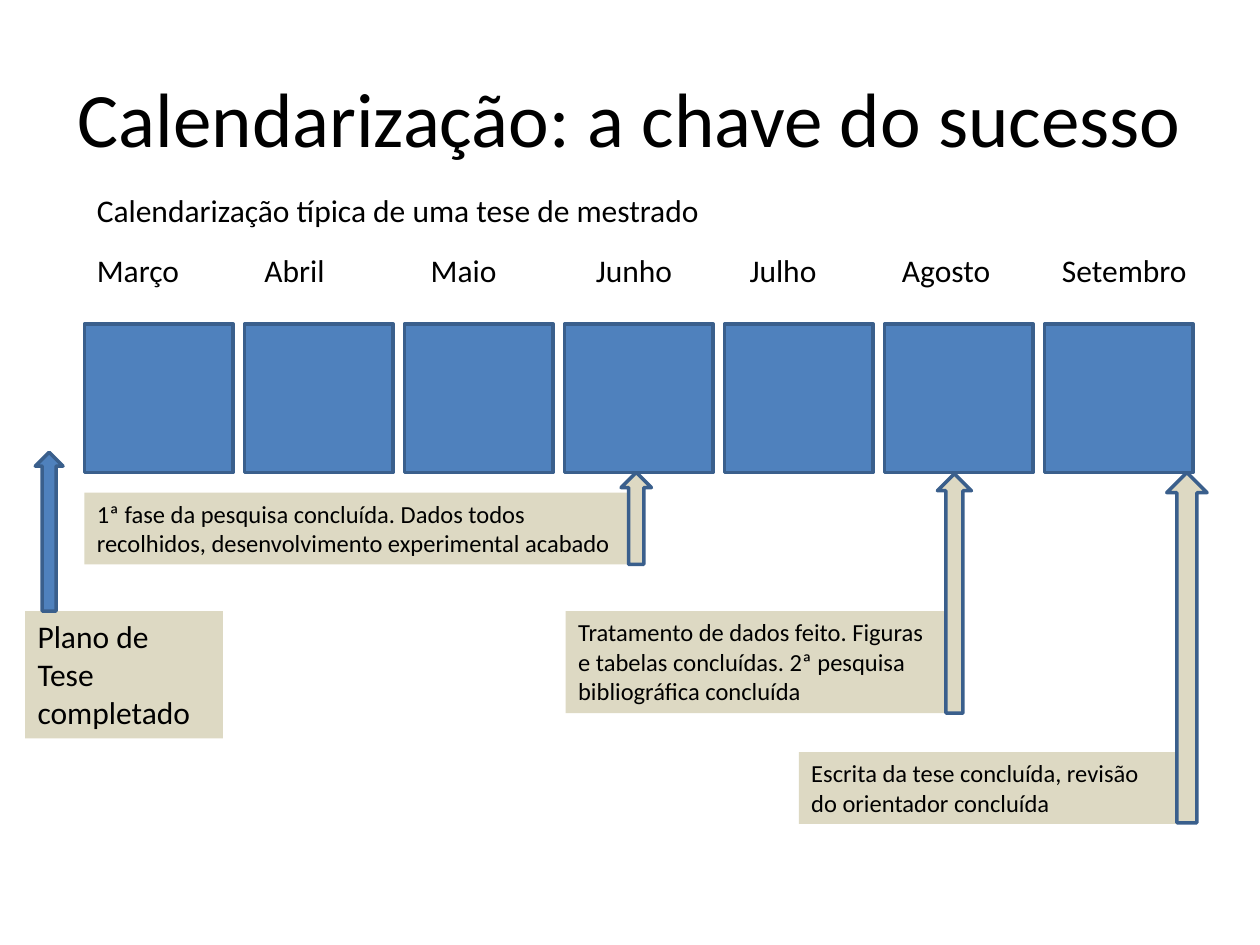
from lxml import etree
from pptx import Presentation
from pptx import util as u
from pptx.dml.color import RGBColor
from pptx.enum import shapes, text
from pptx.oxml.ns import qn

COLORS = {"text": "000000", "month": "4F81BD", "outline": "3A5F8C", "note": "DDD9C3"}

MONTHS = ["Março", "Abril", "Maio", "Junho", "Julho", "Agosto", "Setembro"]
MONTH_TABS = [1.33, 2.65, 3.96, 5.18, 6.39, 7.66]
LEFT, TOP, SIDE, PITCH = 0.67, 2.57, 1.18, 1.27

# left, top, width, height, font size, paragraphs
NOTES = [
    (0.2, 4.85, 1.57, 1.01, 18, ["Plano de Tese", "completado"]),
    (LEFT, 3.91, 4.33, 0.57, 14,
     ["1ª fase da pesquisa concluída. Dados todos recolhidos, "
      "desenvolvimento experimental acabado"]),
    (4.49, 4.85, 3.03, 0.81, 14,
     ["Tratamento de dados feito. Figuras e tabelas concluídas. "
      "2ª pesquisa bibliográfica concluída"]),
    (6.34, 5.97, 3.03, 0.57, 14,
     ["Escrita da tese concluída, revisão do orientador concluída"]),
]

# left, top, width, height, fill
ARROWS = [
    (0.28, 3.59, 0.22, 1.26, "month"),
    (4.93, 3.75, 0.24, 0.73, "note"),
    (7.44, 3.76, 0.27, 1.9, "note"),
    (9.26, 3.75, 0.32, 2.78, "note"),
]


def rgb(name):
    return RGBColor.from_string(COLORS[name])


def write(tf, paragraphs, size, align=text.PP_ALIGN.LEFT, anchor=text.MSO_ANCHOR.TOP):
    tf.word_wrap = True
    tf.vertical_anchor = anchor
    for i, line in enumerate(paragraphs):
        p = tf.paragraphs[0] if i == 0 else tf.add_paragraph()
        p.alignment = align
        r = p.add_run()
        r.text = line
        for name, value in {"size": u.Pt(size), "name": "Calibri"}.items():
            setattr(r.font, name, value)
        r.font.color.rgb = rgb("text")


def add_title(s, line):
    sp = s.shapes.title
    box = {"left": 0.5, "top": 0.3, "width": 9, "height": 1.25}
    for name, value in box.items():
        setattr(sp, name, u.Inches(value))
    write(sp.text_frame, [line], 44, text.PP_ALIGN.CENTER, text.MSO_ANCHOR.MIDDLE)


def add_label(s, box, line):
    sp = s.shapes.add_textbox(*map(u.Inches, box))
    write(sp.text_frame, [line], 18)
    return sp


def add_block(s, kind, box, fill, outlined=True):
    sp = s.shapes.add_shape(kind, *map(u.Inches, box))
    sp.shadow.inherit = False
    sp.fill.solid()
    sp.fill.fore_color.rgb = rgb(fill)
    if outlined:
        sp.line.color.rgb = rgb("outline")
        sp.line.width = u.Pt(2)
    else:
        sp.line.fill.background()
    return sp


def set_tabs(p, stops):
    tabs = etree.SubElement(p._p.get_or_add_pPr(), qn("a:tabLst"))
    for stop in stops:
        etree.SubElement(tabs, qn("a:tab"), pos=str(u.Inches(stop)), algn="l")


def main():
    prs = Presentation()
    prs.slide_width, prs.slide_height = u.Inches(10), u.Inches(7.5)
    s = prs.slides.add_slide(prs.slide_layouts[5])
    rect, arrow = shapes.MSO_SHAPE.RECTANGLE, shapes.MSO_SHAPE.UP_ARROW

    add_title(s, "Calendarização: a chave do sucesso")
    add_label(s, (LEFT, 1.47, 8.83, 0.4), "Calendarização típica de uma tese de mestrado")
    months = add_label(s, (LEFT, 1.94, 8.98, 0.4), "\t".join(MONTHS))
    set_tabs(months.text_frame.paragraphs[0], MONTH_TABS)

    for i in range(len(MONTHS)):
        add_block(s, rect, (LEFT + i * PITCH, TOP, SIDE, SIDE), "month")
    for *box, size, paragraphs in NOTES:
        sp = add_block(s, rect, box, "note", outlined=False)
        write(sp.text_frame, paragraphs, size)
    for *box, fill in ARROWS:
        add_block(s, arrow, box, fill)

    prs.save("out.pptx")


if __name__ == "__main__":
    main()
